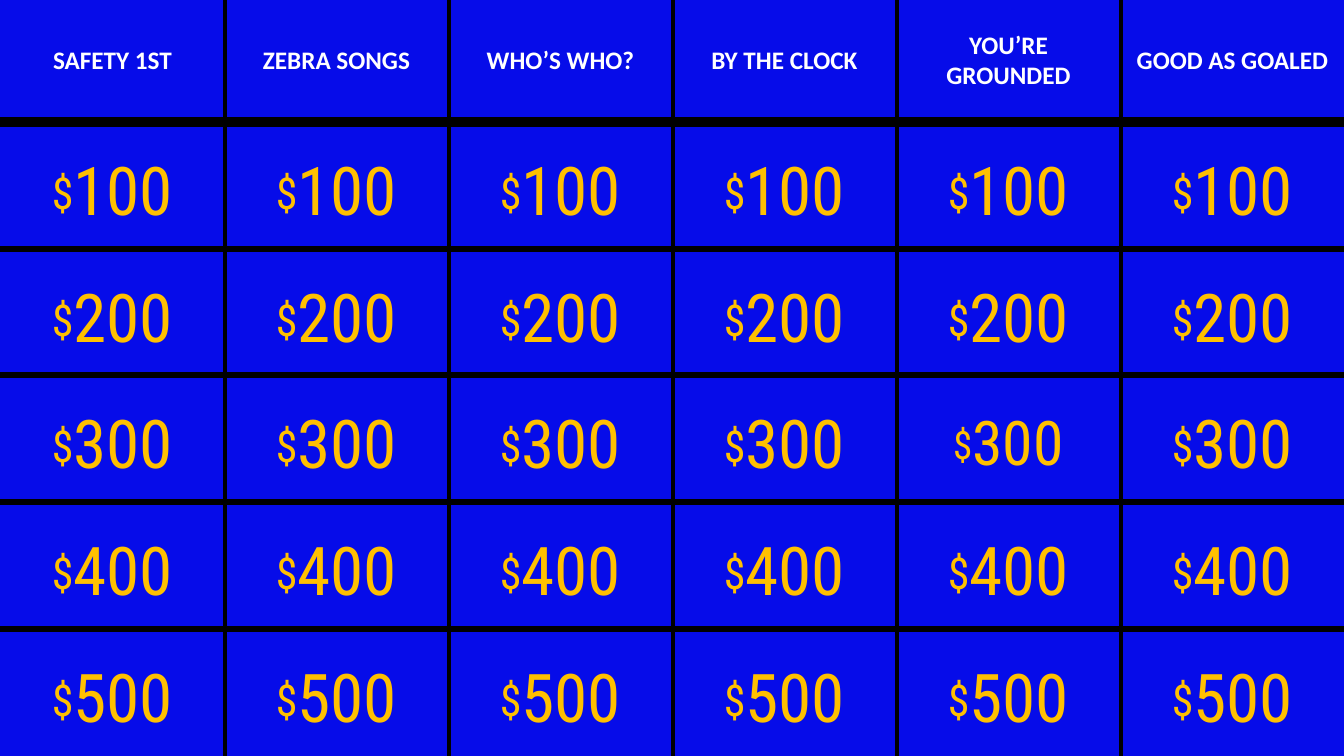
from lxml.etree import SubElement
from pptx import Presentation
from pptx.dml.color import RGBColor
from pptx.enum.shapes import MSO_CONNECTOR, MSO_SHAPE
from pptx.enum.text import MSO_ANCHOR, PP_ALIGN
from pptx.oxml.ns import qn
from pptx.util import Emu, Pt

BOARD_BLUE = RGBColor(0x06, 0x0C, 0xE9)
GOLD = RGBColor(0xFF, 0xC0, 0x00)
WHITE = RGBColor(0xFF, 0xFF, 0xFF)
BLACK = RGBColor(0x00, 0x00, 0x00)

SLIDE_WIDTH, SLIDE_HEIGHT = 1344, 756
COLUMN_WIDTH = 224
CARD_WIDTH, CARD_HEIGHT = 223, 127
CATEGORIES = [
    "SAFETY 1ST", "ZEBRA SONGS", "WHO’S WHO?",
    "BY THE CLOCK", "YOU’RE GROUNDED", "GOOD AS GOALED",
]
AMOUNTS = [100, 200, 300, 400, 500]
SMALL_CARD = ("YOU’RE GROUNDED", 300)


def px(length):
    return Emu(round(length * 914400 / 100.8))


def column_left(column):
    return COLUMN_WIDTH * column + 1


def row_top(row):
    """Six rows, the header included, share the height from just above the slide."""
    return 633 * row // 5 - 4


def add_text(paragraph, text, *, size, font, color, bold=False, baseline=None):
    run = paragraph.add_run()
    run.text = text
    run.font.size = Pt(size)
    run.font.name = font
    run.font.color.rgb = color
    run.font.bold = bold
    if baseline is not None:
        run.font._element.set("baseline", str(baseline * 1000))


class Board:
    def __init__(self, slide):
        self.slide = slide
        self.header_style = {"size": 18, "font": "Calibri", "color": WHITE, "bold": True}
        self.amount_style = {"font": "Roboto Condensed", "color": GOLD}
        background = slide.background.fill
        background.solid()
        background.fore_color.rgb = BOARD_BLUE

    def card(self, column, row):
        """Draw an empty card and return its paragraph."""
        shape = self.slide.shapes.add_shape(
            MSO_SHAPE.RECTANGLE, px(column_left(column)), px(row_top(row)),
            px(CARD_WIDTH), px(CARD_HEIGHT))
        shape.shadow.inherit = False
        shape.fill.solid()
        shape.fill.fore_color.rgb = BOARD_BLUE
        shape.line.fill.background()
        shape.text_frame.word_wrap = True
        shape.text_frame.vertical_anchor = MSO_ANCHOR.MIDDLE
        paragraph = shape.text_frame.paragraphs[0]
        paragraph.alignment = PP_ALIGN.CENTER
        return paragraph

    def header(self, column, category):
        add_text(self.card(column, 0), category, **self.header_style)

    def amount(self, column, row, value, sign_size=54, digit_size=48):
        paragraph = self.card(column, row)
        add_text(paragraph, "$", size=sign_size, baseline=8, **self.amount_style)
        add_text(paragraph, str(value), size=digit_size, baseline=0, **self.amount_style)

    def rule(self, start, end, width):
        connector = self.slide.shapes.add_connector(
            MSO_CONNECTOR.STRAIGHT, *map(px, start + end))
        connector.line.color.rgb = BLACK
        connector.line.width = Pt(width)
        SubElement(connector._element.spPr, qn("a:effectLst"))


def main():
    presentation = Presentation()
    presentation.slide_width = px(SLIDE_WIDTH)
    presentation.slide_height = px(SLIDE_HEIGHT)
    board = Board(presentation.slides.add_slide(presentation.slide_layouts[6]))

    for column, category in enumerate(CATEGORIES):
        board.header(column, category)
        for row, value in enumerate(AMOUNTS, start=1):
            sizes = (48, 44) if (category, value) == SMALL_CARD else (54, 48)
            board.amount(column, row, value, *sizes)

    for row in range(1, len(AMOUNTS) + 1):
        board.rule((-1, row_top(row)), (1352, row_top(row)), 6.5 if row == 1 else 4)
    for column in range(1, len(CATEGORIES)):
        board.rule((column_left(column), -5), (column_left(column), 768), 3.5)

    presentation.save("out.pptx")


if __name__ == "__main__":
    main()
